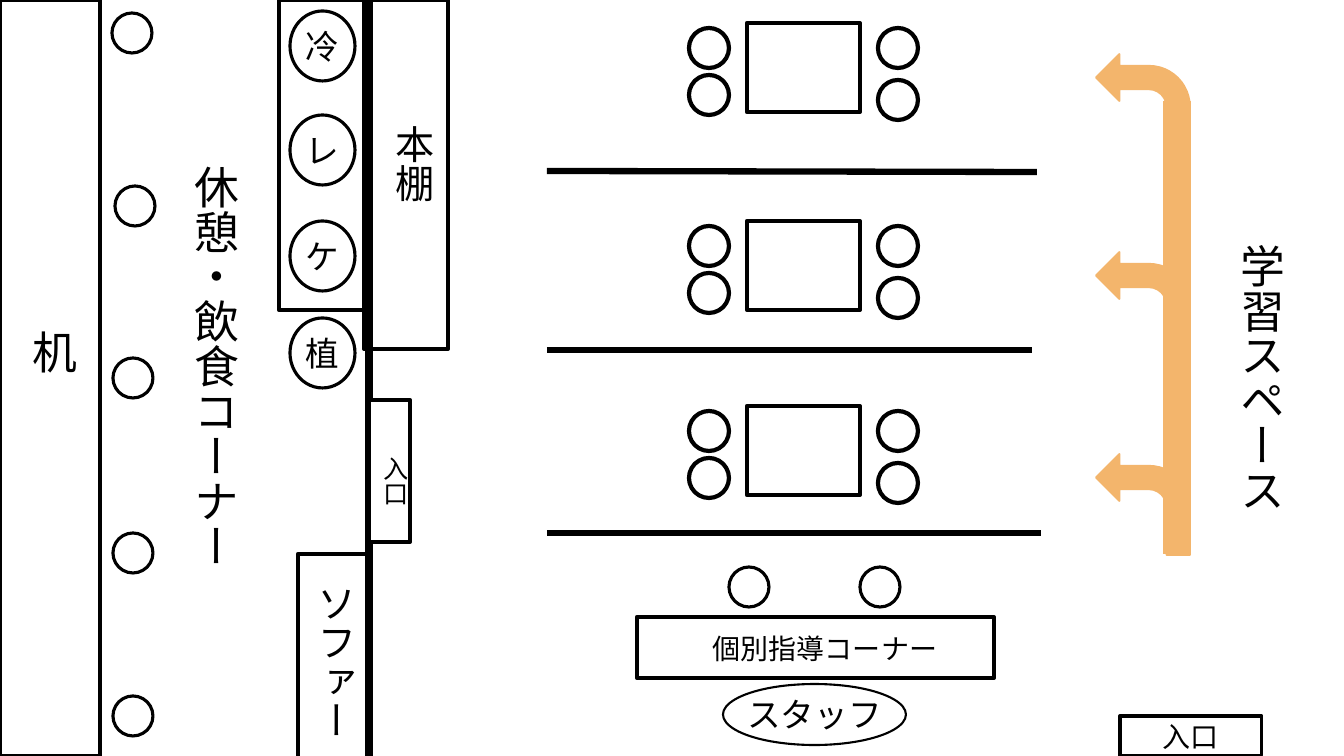
from pptx import Presentation
from pptx.dml.color import RGBColor
from pptx.enum.shapes import MSO_CONNECTOR, MSO_SHAPE
from pptx.enum.text import MSO_ANCHOR, PP_ALIGN
from pptx.oxml.ns import qn
from pptx.util import Pt

RECTANGLE, OVAL, BENT_ARROW = MSO_SHAPE.RECTANGLE, MSO_SHAPE.OVAL, MSO_SHAPE.BENT_ARROW
STRAIGHT = MSO_CONNECTOR.STRAIGHT
MIDDLE, CENTER, LEFT = MSO_ANCHOR.MIDDLE, PP_ALIGN.CENTER, PP_ALIGN.LEFT

FONT = "Noto Sans CJK JP"
BLACK, WHITE, ORANGE = "000000", "FFFFFF", "F3B56C"
EMU_PER_PX = 914400 / 100.8
SLIDE_WIDTH, SLIDE_HEIGHT = 1344, 756
CHAIR = 40

# Lines: x1, y1, x2, y2
PARTITIONS = [(547, 171, 1037, 172), (547, 350, 1032, 350), (547, 533, 1041, 533)]
WALL = (369, 0, 369, SLIDE_HEIGHT)
ROUTE = (1177, 554, 1177, 101)

# Boxes: left, top, width, height
DESK = (0, 0, 100, SLIDE_HEIGHT)
APPLIANCE_SHELF = (279, 0, 87, 310)
BOOKSHELF = (364, 0, 84, 349)
SIDE_ENTRANCE = (369, 400, 41, 142)
SOFA = (298, 554, 69, 205)
TUTORING_COUNTER = (637, 617, 357, 61)
MAIN_ENTRANCE = (1120, 716, 142, 40)
STAFF = (723, 684, 183, 61)

TABLE_LEFT, TABLE_WIDTH, TABLE_HEIGHT = 747, 113, 89
TABLE_TOPS = [23, 221, 406]
TABLE_CHAIR_OFFSETS = [(-58, 5), (-58, 52), (131, 57), (131, 5)]
SINGLE_CHAIRS = [(112, 13), (115, 186), (113, 358), (113, 533), (113, 696),
                 (729, 567), (860, 567)]

APPLIANCE_LEFT, APPLIANCE_WIDTH, APPLIANCE_HEIGHT = 290, 65, 70
APPLIANCES = [("冷", 11), ("レ", 115), ("ケ", 221), ("植", 318)]

ARROW_LEFT, ARROW_WIDTH, ARROW_HEIGHT = 1096, 94, 101
ARROW_TOPS = [54, 252, 454]

# Text, box, point size
VERTICAL_LABELS = [
    ("入口", (365, 446, 50, 104), 18),
    ("机", (10, 320, 75, 140), 32),
    ("休憩・飲食コーナー", (172, 155, 75, 524), 32),
    ("学習スペース", (1218, 234, 75, 367), 32),
    ("ソファー", (296, 574, 68, 205), 28),
    ("本棚", (374, 115, 68, 198), 28),
]
COUNTER_LABEL = ("個別指導コーナー", (655, 627, 340, 44), 20)


def px(length):
    return round(length * EMU_PER_PX)


def color(hex_string):
    return RGBColor.from_string(hex_string)


def add_line(slide, ends, width, line_color=BLACK):
    connector = slide.shapes.add_connector(STRAIGHT, *map(px, ends))
    connector.line.color.rgb = color(line_color)
    connector.line.width = Pt(width)
    properties = connector._element.spPr
    properties.append(properties.makeelement(qn("a:effectLst"), {}))


def add_outline(shapes, kind, box, width, fill=WHITE, line_color=BLACK):
    shape = shapes.add_shape(kind, *map(px, box))
    shape.shadow.inherit = False
    if fill:
        shape.fill.solid()
        shape.fill.fore_color.rgb = color(fill)
    else:
        shape.fill.background()
    shape.line.color.rgb = color(line_color)
    shape.line.width = Pt(width)
    return shape


def write(text_frame, text, size, alignment):
    text_frame.text = text
    paragraph = text_frame.paragraphs[0]
    paragraph.alignment = alignment
    run = paragraph.runs[0]
    run.font.size = Pt(size)
    run.font.color.rgb = color(BLACK)
    run.font.name = FONT
    properties = run._r.get_or_add_rPr()
    properties.append(properties.makeelement(qn("a:ea"), {"typeface": FONT}))


def write_inside(shape, text, size):
    """Centre one unwrapped line of text in a shape."""
    text_frame = shape.text_frame
    text_frame.margin_left = text_frame.margin_right = 0
    text_frame.margin_top = text_frame.margin_bottom = 0
    text_frame.word_wrap = False
    text_frame.vertical_anchor = MIDDLE
    write(text_frame, text, size, CENTER)


def add_label(slide, text, box, size, vertical=False):
    text_frame = slide.shapes.add_textbox(*map(px, box)).text_frame
    text_frame.word_wrap = True
    if vertical:
        text_frame._txBody.bodyPr.set("vert", "eaVert")
    write(text_frame, text, size, LEFT if vertical else CENTER)


def add_study_table(slide, top):
    """Group a table with its four chairs."""
    shapes = slide.shapes.add_group_shape().shapes
    add_outline(shapes, RECTANGLE, (TABLE_LEFT, top, TABLE_WIDTH, TABLE_HEIGHT), 3)
    for across, down in TABLE_CHAIR_OFFSETS:
        add_outline(shapes, OVAL, (TABLE_LEFT + across, top + down, CHAIR, CHAIR), 3)


def main():
    presentation = Presentation()
    presentation.slide_width = px(SLIDE_WIDTH)
    presentation.slide_height = px(SLIDE_HEIGHT)
    slide = presentation.slides.add_slide(presentation.slide_layouts[6])
    shapes = slide.shapes

    for partition in PARTITIONS:
        add_line(slide, partition, 4.5)
    write_inside(add_outline(shapes, RECTANGLE, MAIN_ENTRANCE, 2.25), "入口", 20)
    add_line(slide, WALL, 6)

    add_outline(shapes, RECTANGLE, TUTORING_COUNTER, 3)
    add_label(slide, *COUNTER_LABEL)
    write_inside(add_outline(shapes, OVAL, STAFF, 1.5), "スタッフ", 24)
    for top in TABLE_TOPS:
        add_study_table(slide, top)
    for left, top in SINGLE_CHAIRS:
        add_outline(shapes, OVAL, (left, top, CHAIR, CHAIR), 2.25)

    for box in (SIDE_ENTRANCE, APPLIANCE_SHELF):
        add_outline(shapes, RECTANGLE, box, 3)
    for box in (DESK, SOFA, BOOKSHELF):
        add_outline(shapes, RECTANGLE, box, 3, fill=None)
    for text, top in APPLIANCES:
        box = (APPLIANCE_LEFT, top, APPLIANCE_WIDTH, APPLIANCE_HEIGHT)
        write_inside(add_outline(shapes, OVAL, box, 2.25), text, 24)
    for text, box, size in VERTICAL_LABELS:
        add_label(slide, text, box, size, vertical=True)

    add_line(slide, ROUTE, 20.25, ORANGE)
    for top in ARROW_TOPS:
        box = (ARROW_LEFT, top, ARROW_WIDTH, ARROW_HEIGHT)
        arrow = add_outline(shapes, BENT_ARROW, box, 1.25, ORANGE, ORANGE)
        arrow._element.spPr.xfrm.set("flipH", "1")

    presentation.save("out.pptx")


if __name__ == "__main__":
    main()
